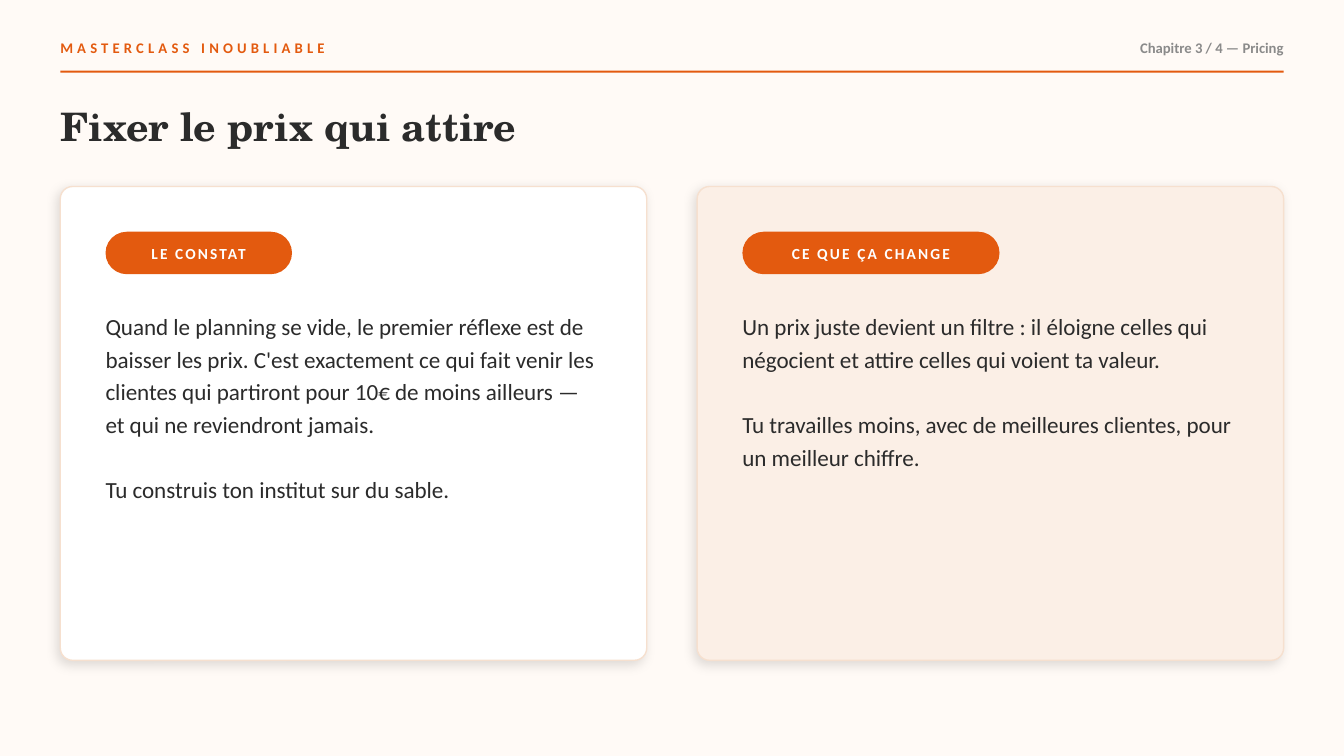
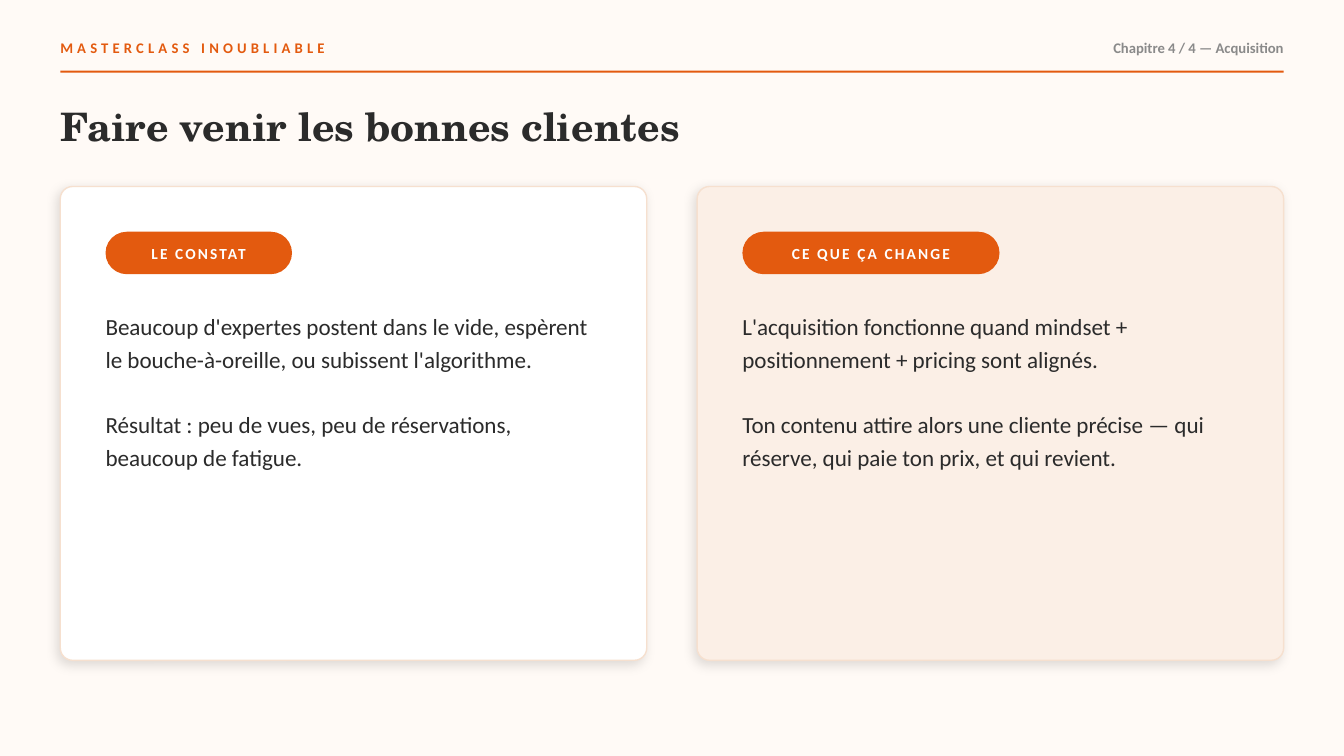
from lxml import etree
from pptx import Presentation
from pptx.dml.color import RGBColor
from pptx.enum.shapes import MSO_SHAPE
from pptx.enum.text import MSO_ANCHOR, PP_ALIGN
from pptx.util import Cm, Pt

LEFT, CENTER, RIGHT = PP_ALIGN.LEFT, PP_ALIGN.CENTER, PP_ALIGN.RIGHT
TOP, MIDDLE = MSO_ANCHOR.TOP, MSO_ANCHOR.MIDDLE
RECT, ROUND = MSO_SHAPE.RECTANGLE, MSO_SHAPE.ROUNDED_RECTANGLE

COLORS = {
    "background": "FFFAF6",
    "accent": "E35A0F",
    "ink": "2B2B2B",
    "muted": "8A8A8A",
    "white": "FFFFFF",
    "peach": "FBEFE6",
    "border": "F6E0CF",
}
BODY_FONT, TITLE_FONT = "Calibri", "TeX Gyre Schola"
SHADOW = (
    '<a:outerShdw xmlns:a="http://schemas.openxmlformats.org/drawingml/2006/main" '
    'blurRad="101600" dist="38100" dir="8100000" algn="bl" rotWithShape="0">'
    '<a:srgbClr val="000000"><a:alpha val="12000"/></a:srgbClr></a:outerShdw>'
)

SLIDE_W, SLIDE_H = 33.87, 19.05
MARGIN, GAP, PAD = 1.52, 1.27, 1.14
CONTENT_W = SLIDE_W - 2 * MARGIN
CARD_W = (CONTENT_W - GAP) / 2
CARD_TOP, CARD_H = 4.7, 11.94
HEADER_W = 15.24

CARDS = [("LE CONSTAT", 4.7, "white"), ("CE QUE ÇA CHANGE", 6.48, "peach")]
CHAPTERS = [
    (
        "Chapitre 3 / 4 — Pricing",
        "Fixer le prix qui attire",
        [
            [
                "Quand le planning se vide, le premier réflexe est de baisser les prix. "
                "C'est exactement ce qui fait venir les clientes qui partiront pour 10€ "
                "de moins ailleurs — et qui ne reviendront jamais.",
                "Tu construis ton institut sur du sable.",
            ],
            [
                "Un prix juste devient un filtre : il éloigne celles qui négocient "
                "et attire celles qui voient ta valeur.",
                "Tu travailles moins, avec de meilleures clientes, pour un meilleur chiffre.",
            ],
        ],
    ),
    (
        "Chapitre 4 / 4 — Acquisition",
        "Faire venir les bonnes clientes",
        [
            [
                "Beaucoup d'expertes postent dans le vide, espèrent le bouche-à-oreille, "
                "ou subissent l'algorithme.",
                "Résultat : peu de vues, peu de réservations, beaucoup de fatigue.",
            ],
            [
                "L'acquisition fonctionne quand mindset + positionnement + pricing "
                "sont alignés.",
                "Ton contenu attire alors une cliente précise — qui réserve, "
                "qui paie ton prix, et qui revient.",
            ],
        ],
    ),
]


def add_block(s, kind, x, y, w, h, fill, radius=None):
    sp = s.shapes.add_shape(kind, Cm(x), Cm(y), Cm(w), Cm(h))
    sp.shadow.inherit = False
    sp.fill.solid()
    sp.fill.fore_color.rgb = RGBColor.from_string(COLORS[fill])
    sp.line.fill.background()
    if radius is not None:
        sp.adjustments[0] = radius
    return sp


def write(sp, texts, size, color, bold=True, font=BODY_FONT, align=LEFT,
          anchor=MIDDLE, tracking=0, leading=None, gap=0):
    tf = sp.text_frame
    tf.word_wrap = True
    tf.vertical_anchor = anchor
    tf.margin_left = tf.margin_right = tf.margin_top = tf.margin_bottom = 0
    for i, text in enumerate(texts):
        p = tf.add_paragraph() if i else tf.paragraphs[0]
        p.alignment = align
        if leading:
            p.line_spacing = leading
        if i:
            p.space_before = Pt(gap)
        r = p.add_run()
        r.text = text
        r.font.name = font
        r.font.size = Pt(size)
        r.font.bold = bold
        r.font.color.rgb = RGBColor.from_string(COLORS[color])
        if tracking:
            r._r.get_or_add_rPr().set("spc", str(int(tracking * 100)))


prs = Presentation()
prs.slide_width, prs.slide_height = Cm(SLIDE_W), Cm(SLIDE_H)
background = prs.slide_master.background.fill
background.solid()
background.fore_color.rgb = RGBColor.from_string(COLORS["background"])

for chapter, title, bodies in CHAPTERS:
    s = prs.slides.add_slide(prs.slide_layouts[6])

    sp = s.shapes.add_textbox(Cm(MARGIN), Cm(0.81), Cm(HEADER_W), Cm(0.76))
    write(sp, ["MASTERCLASS INOUBLIABLE"], 10.5, "accent", tracking=3)
    sp = s.shapes.add_textbox(Cm(SLIDE_W - MARGIN - HEADER_W), Cm(0.81),
                              Cm(HEADER_W), Cm(0.76))
    write(sp, [chapter], 10.5, "muted", align=RIGHT)
    add_block(s, RECT, MARGIN, 1.78, CONTENT_W, 0.05, "accent")
    sp = s.shapes.add_textbox(Cm(MARGIN), Cm(2.41), Cm(CONTENT_W), Cm(1.52))
    write(sp, [title], 28, "ink", font=TITLE_FONT)

    for i, ((label, pill_w, fill), body) in enumerate(zip(CARDS, bodies)):
        x = MARGIN + i * (CARD_W + GAP)
        card = add_block(s, ROUND, x, CARD_TOP, CARD_W, CARD_H, fill, 0.026)
        card.line.color.rgb = RGBColor.from_string(COLORS["border"])
        card.line.width = Pt(1)
        card._element.spPr.find("{*}effectLst").append(etree.fromstring(SHADOW))

        pill = add_block(s, ROUND, x + PAD, CARD_TOP + PAD, pill_w, 1.07, "accent", 0.5)
        write(pill, [label], 11, "white", align=CENTER, tracking=1.5)
        sp = s.shapes.add_textbox(Cm(x + PAD), Cm(7.75), Cm(CARD_W - 2 * PAD), Cm(8.13))
        write(sp, body, 16.5, "ink", bold=False, anchor=TOP, leading=1.18, gap=23.3)

prs.save("out.pptx")
